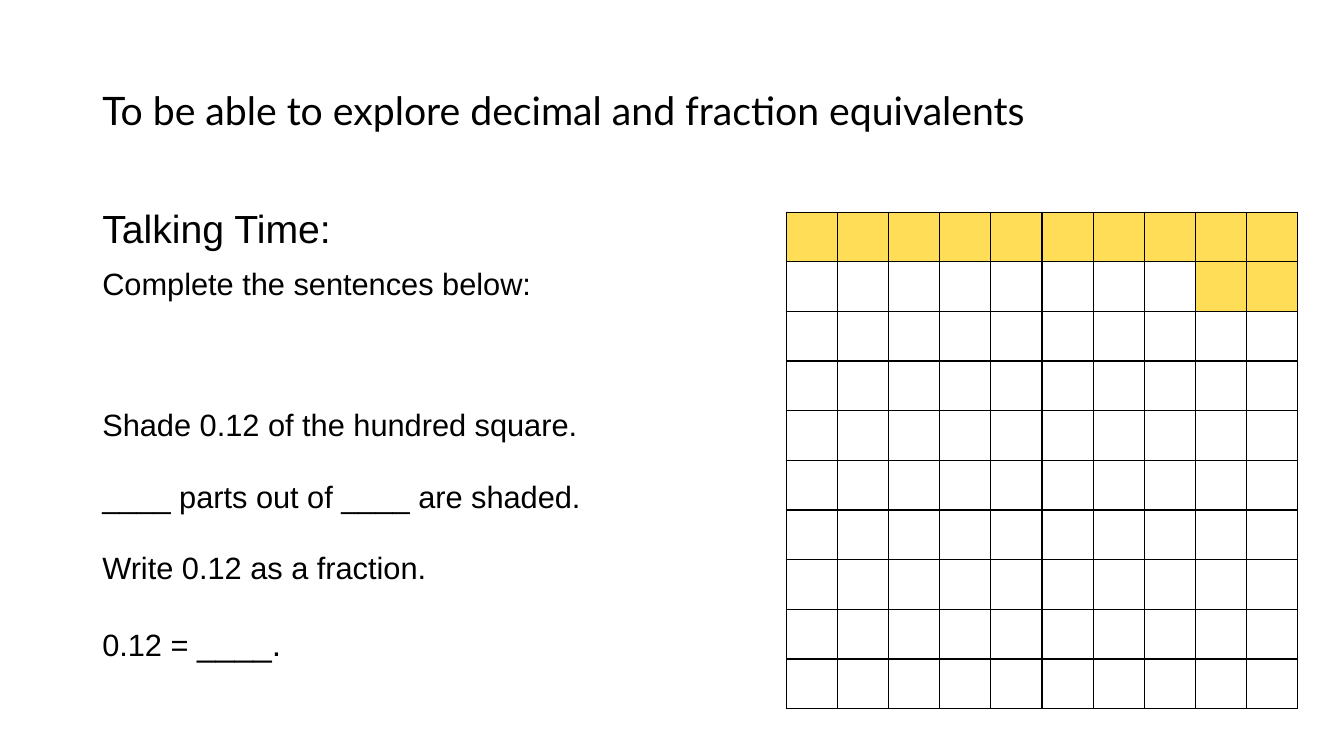
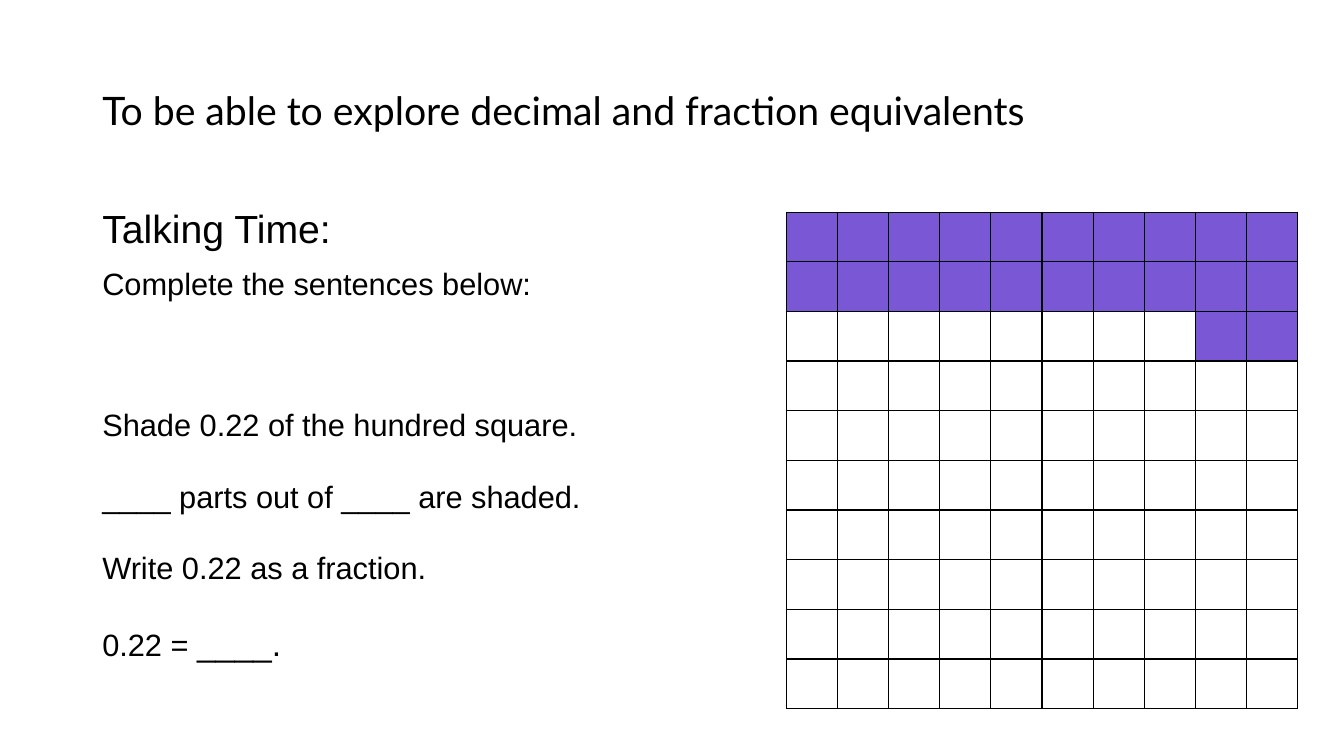
from dataclasses import dataclass

from lxml import etree
from pptx import Presentation
from pptx.dml.color import RGBColor
from pptx.enum.text import MSO_ANCHOR
from pptx.oxml.ns import qn
from pptx.util import Pt

PX = 9525
MIDDLE, TOP = MSO_ANCHOR.MIDDLE, MSO_ANCHOR.TOP
COLORS = {"ink": "000000", "paper": "FFFFFF", "gold": "FFDD57", "violet": "7957D5"}
TITLE = "To be able to explore decimal and fraction equivalents"
SIDE = 10  # cells along each side of the hundred square
EDGES = ("a:lnL", "a:lnR", "a:lnT", "a:lnB")


@dataclass(frozen=True)
class Box:
    x: int
    y: int
    w: int
    h: int

    def emu(self) -> tuple:
        return tuple(n * PX for n in (self.x, self.y, self.w, self.h))


@dataclass(frozen=True)
class Line:
    """One paragraph: its runs as (text, size) pairs, and its spacing."""
    runs: tuple
    lead: float = 1.5
    before: float = 11.7


@dataclass(frozen=True)
class Task:
    shaded: int
    color: str


TITLE_BOX = Box(88, 38, 922, 139)
BODY_BOX = Box(88, 195, 640, 500)
GRID_BOX = Box(749, 202, 487, 473)
TASKS = (Task(12, "gold"), Task(22, "violet"))


def rgb(name: str) -> RGBColor:
    return RGBColor.from_string(COLORS[name])


def add_text(slide, box: Box, lines: tuple, *, font: str = "Arial",
             color: str = "ink", anchor=TOP) -> None:
    frame = slide.shapes.add_textbox(*box.emu()).text_frame
    frame.word_wrap = True
    frame.vertical_anchor = anchor
    for i, line in enumerate(lines):
        para = frame.add_paragraph() if i else frame.paragraphs[0]
        para.line_spacing = line.lead
        if i:
            para.space_before = Pt(line.before)
        for text, size in line.runs:
            run = para.add_run()
            run.text = text
            run.font.name = font
            run.font.size = Pt(size)
            run.font.color.rgb = rgb(color)


def add_edges(cell, color: str, width: int = 1) -> None:
    """Rule all four sides of a cell; call before its fill is set."""
    props = cell._tc.get_or_add_tcPr()
    for edge in EDGES:
        rule = etree.SubElement(props, qn(edge), w=str(Pt(width)))
        fill = etree.SubElement(rule, qn("a:solidFill"))
        etree.SubElement(fill, qn("a:srgbClr"), val=COLORS[color])


def is_shaded(row: int, col: int, count: int) -> bool:
    """Whole rows fill from the top; the rest sit at the right of the next."""
    full, rest = divmod(count, SIDE)
    return row < full or (row == full and col >= SIDE - rest)


def add_grid(slide, box: Box, task: Task) -> None:
    table = slide.shapes.add_table(SIDE, SIDE, *box.emu()).table
    table.first_row = table.horz_banding = False
    for col in table.columns:
        col.width = box.w * PX // SIDE
    for row in table.rows:
        row.height = box.h * PX // SIDE
    for i in range(SIDE):
        for j in range(SIDE):
            cell = table.cell(i, j)
            add_edges(cell, "ink")
            cell.fill.solid()
            shade = task.color if is_shaded(i, j, task.shaded) else "paper"
            cell.fill.fore_color.rgb = rgb(shade)


def add_task(deck, task: Task) -> None:
    slide = deck.slides.add_slide(deck.slide_layouts[6])
    value = f"{task.shaded / SIDE ** 2:.2f}"
    add_text(slide, TITLE_BOX, (Line(((TITLE, 28),), lead=0.9),),
             font="Lato", anchor=MIDDLE)
    add_text(slide, BODY_BOX, (
        Line((("Talking Time:", 28),), lead=0.9),
        Line((("Complete the sentences below:", 22),), lead=0.9),
        Line(((f"Shade {value} of the hundred square.", 22),), before=61),
        Line((("____ parts out of ____ are shaded.", 22),)),
        Line(((f"Write {value} as a fraction.", 22),)),
        Line(((f"{value} = ", 22), ("____.", 24))),
    ))
    add_grid(slide, GRID_BOX, task)


def main() -> None:
    deck = Presentation()
    deck.slide_width, deck.slide_height = 1280 * PX, 720 * PX
    for task in TASKS:
        add_task(deck, task)
    deck.save("out.pptx")


if __name__ == "__main__":
    main()
